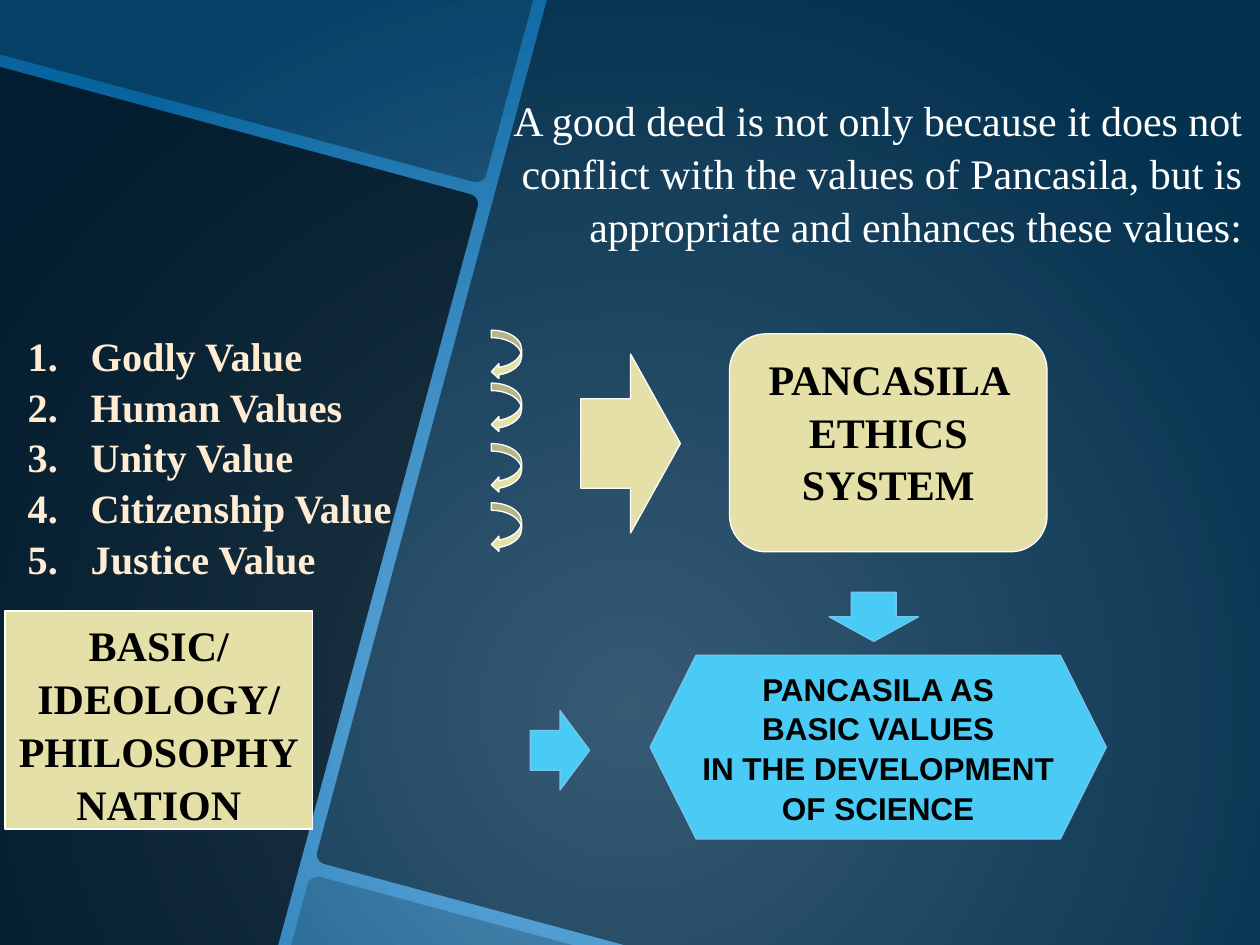
from math import cos, radians, sin

from lxml.etree import SubElement
from pptx import Presentation
from pptx.dml.color import RGBColor
from pptx.enum.shapes import MSO_SHAPE as Preset
from pptx.enum.text import MSO_ANCHOR as Anchor, MSO_AUTO_SIZE as AutoSize, PP_ALIGN as Align
from pptx.oxml.ns import qn
from pptx.util import Inches, Pt

COLORS = {
    "glow": "70B6E8", "edge": "08639E", "shade": "000000",
    "white": "FFFFFF", "black": "000000", "cream": "FFECD3",
    "sand": "E4E0A7", "sky": "49CBF6", "sky_line": "76C5EF",
}
SERIF, SANS = "Times New Roman", "Arial"
TILT = 15.1

# Opacity, frame centre and outline; a six-number point is a Bezier corner
PANELS = [
    (70, (1.03, 4.3), [(0, 0.53), (3.73, 1.54), (3.78, 1.55, 3.81, 1.6, 3.79, 1.65),
                       (2.21, 7.5), (0, 7.5)]),
    (35, (2.07, 0.2), [(0, 0), (4.23, 0), (3.86, 1.38),
                       (3.85, 1.43, 3.8, 1.45, 3.75, 1.44), (0, 0.43)]),
    (20, (3.44, 7.5), [(2.51, 6.96), (2.52, 6.95, 2.54, 6.95, 2.55, 6.96), (4.55, 7.5),
                       (2.31, 7.5), (2.44, 7.02), (2.45, 6.98, 2.48, 6.96, 2.51, 6.96)]),
    (50, (7.19, 3.67), [(4.34, 0), (10, 0), (10, 7.5), (4.95, 7.5), (2.58, 6.86),
                        (2.53, 6.85, 2.5, 6.8, 2.52, 6.75)]),
]


def rgb(name):
    return RGBColor.from_string(COLORS[name])


def flatten(outline, steps=6):
    """Turn Bezier corners into short straight pieces."""
    points = []
    for point in outline:
        if len(point) == 2:
            points.append(point)
            continue
        x0, y0 = points[-1]
        x1, y1, x2, y2, x3, y3 = point
        for i in range(1, steps + 1):
            t = i / steps
            a, b, c, d = (1 - t) ** 3, 3 * t * (1 - t) ** 2, 3 * t * t * (1 - t), t ** 3
            points.append((a * x0 + b * x1 + c * x2 + d * x3,
                           a * y0 + b * y1 + c * y2 + d * y3))
    return points


def untilt(point, centre):
    """Rotate a point back into the upright frame of its panel."""
    dx, dy = point[0] - centre[0], point[1] - centre[1]
    angle = radians(TILT)
    return (Inches(centre[0] + dx * cos(angle) + dy * sin(angle)),
            Inches(centre[1] - dx * sin(angle) + dy * cos(angle)))


def paint_background(slide):
    fill = slide.background.fill
    fill.gradient()
    for stop, position, color in zip(fill.gradient_stops, (0, 1), ("glow", "edge")):
        stop.position = position
        stop.color.rgb = rgb(color)
    gradient = slide.element.find(".//" + qn("a:gradFill"))
    gradient.remove(gradient.find(qn("a:lin")))
    circle = SubElement(gradient, qn("a:path"), path="circle")
    SubElement(circle, qn("a:fillToRect"), l="50000", t="50000", r="50000", b="0")


def add_panels(slide):
    """Tilted translucent panels, kept behind the text."""
    for opacity, centre, outline in PANELS:
        start, *rest = [untilt(point, centre) for point in flatten(outline)]
        builder = slide.shapes.build_freeform(*start)
        builder.add_line_segments(rest, close=True)
        panel = builder.convert_to_shape()
        panel.rotation = TILT
        panel.shadow.inherit = False
        panel.fill.solid()
        panel.fill.fore_color.rgb = rgb("shade")
        panel.line.fill.background()
        color = panel.element.spPr.find(".//" + qn("a:srgbClr"))
        SubElement(color, qn("a:alpha"), val=str(opacity * 1000))
        slide.shapes.title.element.addprevious(panel.element)


def write(shape, text, size, font, color, align, bold=True, anchor=Anchor.TOP, wrap=True):
    frame = shape.text_frame
    frame.text = text
    frame.word_wrap = wrap
    frame.auto_size = AutoSize.NONE
    frame.vertical_anchor = anchor
    for paragraph in frame.paragraphs:
        paragraph.alignment = align
        paragraph.line_spacing = 1.05
        paragraph.space_before = Pt(0)
        for run in paragraph.runs:
            run.font.size, run.font.name, run.font.bold = Pt(size), font, bold
            run.font.color.rgb = rgb(color)


def place(shape, box):
    shape.left, shape.top, shape.width, shape.height = (Inches(v) for v in box)


def add_block(slide, preset, box, fill="sand", line="white", adjustments=()):
    block = slide.shapes.add_shape(preset, *(Inches(v) for v in box))
    block.shadow.inherit = False
    block.fill.solid()
    block.fill.fore_color.rgb = rgb(fill)
    block.line.color.rgb = rgb(line)
    block.line.width = Pt(0.75)
    for i, value in enumerate(adjustments):
        block.adjustments[i] = value
    return block


def add_statement(slide, box):
    statement = slide.shapes.title
    place(statement, box)
    write(statement, "A good deed is not only because it does not conflict with the values "
          "of Pancasila, but is appropriate and enhances these values:",
          24, SERIF, "white", Align.RIGHT, bold=False)


def add_values(slide, box):
    values = slide.placeholders[1]
    place(values, box)
    write(values, "Godly Value\nHuman Values\nUnity Value\nCitizenship Value\nJustice Value",
          23, SERIF, "cream", Align.JUSTIFY)
    for paragraph in values.text_frame.paragraphs:
        properties = paragraph._p.get_or_add_pPr()
        properties.set("marL", str(Inches(0.5)))
        properties.set("indent", str(-Inches(0.5)))
        SubElement(properties, qn("a:buFont"), typeface="+mj-lt")
        SubElement(properties, qn("a:buAutoNum"), type="arabicPeriod")


def add_ethics_flow(slide, left, top):
    """Loops between the values, then the arrow to the ethics system."""
    for drop in (0, 0.42, 0.9, 1.37):
        add_block(slide, Preset.CURVED_LEFT_ARROW, (left, top + drop, 0.24, 0.39),
                  adjustments=(0.25, 0.5, 0.25))
    add_block(slide, Preset.RIGHT_ARROW, (left + 0.71, top + 0.19, 0.79, 1.42))
    system = add_block(slide, Preset.ROUNDED_RECTANGLE, (left + 1.89, top + 0.03, 2.52, 1.73))
    write(system, "PANCASILA ETHICS SYSTEM", 24, SERIF, "black", Align.CENTER)


def add_ideology(slide, box):
    ideology = add_block(slide, Preset.RECTANGLE, box)
    write(ideology, "BASIC/\nIDEOLOGY/\nPHILOSOPHY\nNATION", 24, SERIF, "black", Align.CENTER)


def add_science(slide, left, top):
    """Hexagon with the two arrows that lead into it."""
    sky = {"fill": "sky", "line": "sky_line"}
    science = add_block(slide, Preset.HEXAGON, (left, top, 3.62, 1.46), **sky)
    write(science, "PANCASILA AS\nBASIC VALUES\nIN THE DEVELOPMENT\nOF SCIENCE",
          18, SANS, "black", Align.CENTER, anchor=Anchor.MIDDLE, wrap=False)
    add_block(slide, Preset.DOWN_ARROW, (left + 1.42, top - 0.5, 0.71, 0.39), **sky)
    add_block(slide, Preset.RIGHT_ARROW, (left - 0.95, top + 0.44, 0.47, 0.63), **sky)


def main():
    deck = Presentation()
    deck.slide_width, deck.slide_height = Inches(10), Inches(7.5)
    slide = deck.slides.add_slide(deck.slide_layouts[1])
    paint_background(slide)
    add_panels(slide)
    add_statement(slide, (3.79, 0.68, 6.17, 1.31))
    add_values(slide, (0.12, 2.56, 8.95, 2.05))
    add_ethics_flow(slide, 3.9, 2.62)
    add_ideology(slide, (0.04, 4.85, 2.44, 1.73))
    add_science(slide, 5.16, 5.2)
    deck.save("out.pptx")


if __name__ == "__main__":
    main()
